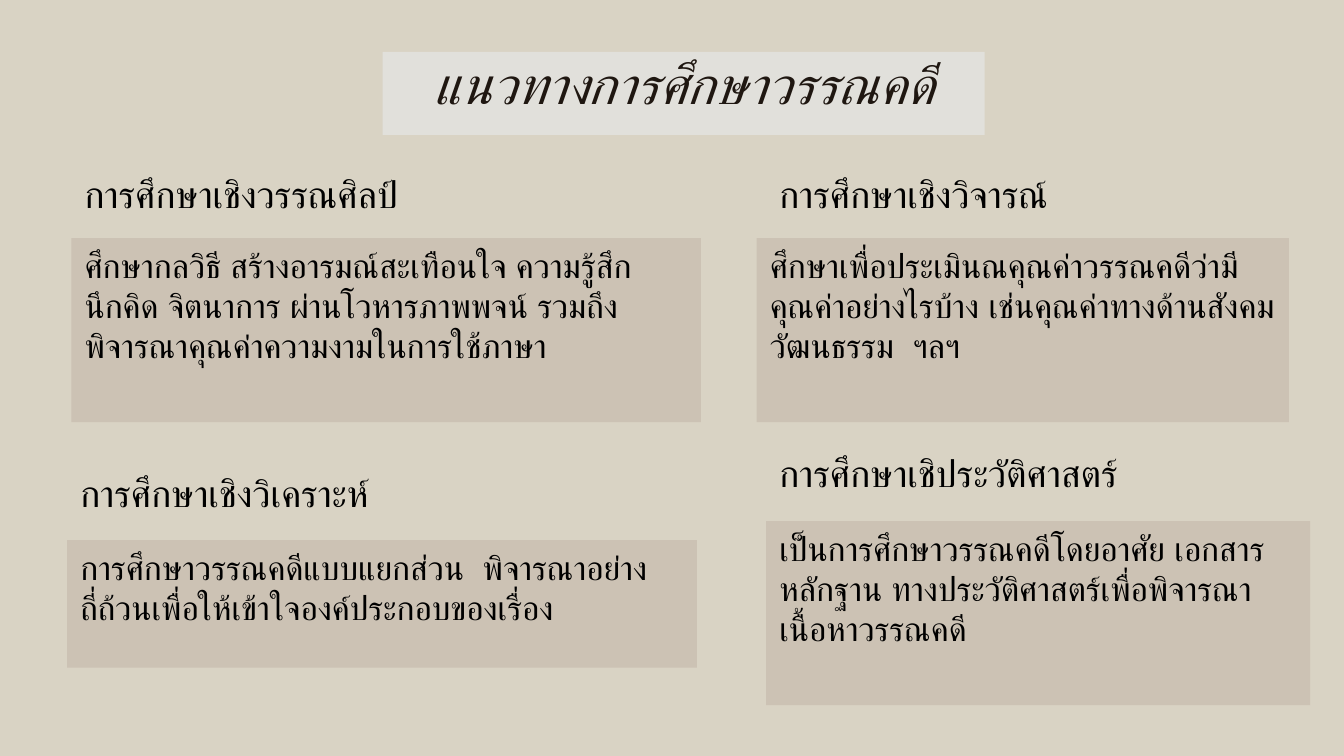
from pptx import Presentation
from pptx.dml.color import RGBColor
from pptx.enum.shapes import MSO_SHAPE
from pptx.enum.text import MSO_ANCHOR, PP_ALIGN
from pptx.oxml.ns import qn
from pptx.util import Cm, Pt

RECTANGLE = MSO_SHAPE.RECTANGLE
TOP = MSO_ANCHOR.TOP
LEFT, CENTER = PP_ALIGN.LEFT, PP_ALIGN.CENTER

SAND = RGBColor(0xD9, 0xD3, 0xC4)
TITLE_FILL = RGBColor(0xE1, 0xE0, 0xDB)
PANEL_FILL = RGBColor(0xCC, 0xC2, 0xB4)
TITLE_INK = RGBColor(0x1F, 0x17, 0x11)
BLACK = RGBColor(0, 0, 0)
TITLE_FONT, BODY_FONT = "DejaVu Sans Mono", "Arial"

# Heading, heading box, description, panel box; boxes are left, top, width, height in cm
APPROACHES = [
    ("การศึกษาเชิงวรรณศิลป์", (1.35, 3.12, 7.92, 1.44),
     "ศึกษากลวิธี สร้างอารมณ์สะเทือนใจ ความรู้สึกนึกคิด จิตนาการ ผ่านโวหารภาพพจน์ "
     "รวมถึงพิจารณาคุณค่าความงามในการใช้ภาษา", (1.35, 4.5, 11.9, 3.48)),
    ("การศึกษาเชิงวิเคราะห์", (1.27, 8.76, 6.8, 1.44),
     "การศึกษาวรรณคดีแบบแยกส่วน  พิจารณาอย่างถี่ถ้วนเพื่อให้เข้าใจองค์ประกอบของเรื่อง",
     (1.27, 10.21, 11.9, 2.41)),
    ("การศึกษาเชิงวิจารณ์", (14.48, 3.12, 6.8, 1.44),
     "ศึกษาเพื่อประเมินณคุณค่าวรรณคดีว่ามีคุณค่าอย่างไรบ้าง เช่นคุณค่าทางด้านสังคม "
     "วัฒนธรรม  ฯลฯ", (14.3, 4.5, 10.06, 3.48)),
    ("การศึกษาเชิประวัติศาสตร์", (14.48, 8.38, 7.77, 1.44),
     "เป็นการศึกษาวรรณคดีโดยอาศัย เอกสารหลักฐาน ทางประวัติศาสตร์เพื่อพิจารณาเนื้อหาวรรณคดี",
     (14.48, 9.85, 10.28, 3.48)),
]


def to_lengths(box):
    return [Cm(value) for value in box]


def write_text(shape, text, size, font=BODY_FONT, color=BLACK, italic=False, align=LEFT):
    frame = shape.text_frame
    frame.word_wrap = True
    frame.vertical_anchor = TOP
    paragraph = frame.paragraphs[0]
    paragraph.alignment = align
    run = paragraph.add_run()
    run.text = text
    run.font.name = font
    run.font.size = Pt(size)
    run.font.italic = italic
    run.font.color.rgb = color
    # Thai takes its typeface from the complex-script entry
    run.font._element.get_or_add_latin().addnext(
        run.font._element.makeelement(qn("a:cs"), {"typeface": font}))


def add_title(slide, box):
    title = slide.shapes.title
    title.left, title.top, title.width, title.height = to_lengths(box)
    title.fill.solid()
    title.fill.fore_color.rgb = TITLE_FILL
    title.text_frame.margin_top = 0
    write_text(title, "แนวทางการศึกษาวรรณคดี", size=28, font=TITLE_FONT,
               color=TITLE_INK, italic=True, align=CENTER)


def add_approach(slide, heading, heading_box, description, panel_box):
    heading_label = slide.shapes.add_textbox(*to_lengths(heading_box))
    write_text(heading_label, heading, size=20)

    panel = slide.shapes.add_shape(RECTANGLE, *to_lengths(panel_box))
    panel.shadow.inherit = False
    panel.fill.solid()
    panel.fill.fore_color.rgb = PANEL_FILL
    panel.line.fill.background()
    write_text(panel, description, size=18)


def main():
    deck = Presentation()
    deck.slide_width, deck.slide_height = Cm(25.4), Cm(14.29)
    slide = deck.slides.add_slide(deck.slide_layouts[5])
    slide.background.fill.solid()
    slide.background.fill.fore_color.rgb = SAND

    add_title(slide, (7.23, 0.98, 11.38, 1.57))
    for approach in APPROACHES:
        add_approach(slide, *approach)
    deck.save("out.pptx")


if __name__ == "__main__":
    main()
